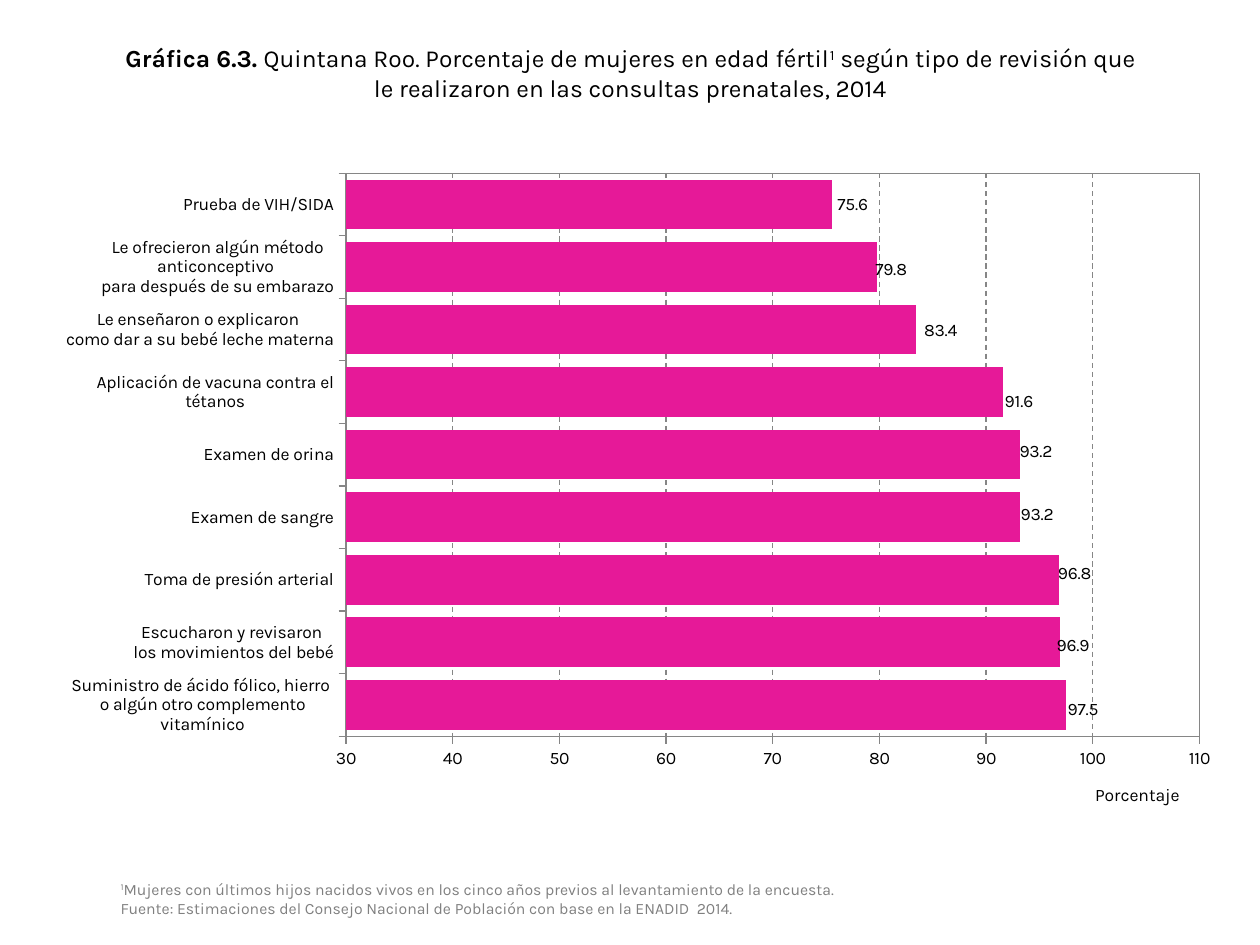
from dataclasses import dataclass

from lxml import etree
from pptx import Presentation
from pptx.chart.data import CategoryChartData
from pptx.dml.color import RGBColor
from pptx.enum.chart import XL_CHART_TYPE, XL_LABEL_POSITION, XL_TICK_MARK
from pptx.enum.dml import MSO_LINE
from pptx.enum.text import MSO_ANCHOR, MSO_AUTO_SIZE, PP_ALIGN
from pptx.oxml import parse_xml
from pptx.oxml.ns import nsdecls, qn
from pptx.util import Inches, Pt

BAR = XL_CHART_TYPE.BAR_CLUSTERED
OUTSIDE_END = XL_LABEL_POSITION.OUTSIDE_END
TICK_OUTSIDE = XL_TICK_MARK.OUTSIDE
DASH = MSO_LINE.DASH
MIDDLE = MSO_ANCHOR.MIDDLE
NO_AUTOFIT = MSO_AUTO_SIZE.NONE
LEFT, CENTER, RIGHT = PP_ALIGN.LEFT, PP_ALIGN.CENTER, PP_ALIGN.RIGHT
TITLE_ONLY = 5
WIDTH, HEIGHT = Inches(10), Inches(7.5)


@dataclass(frozen=True)
class Theme:
    font: str = "Karla"
    text: str = "000000"
    note: str = "808080"
    line: str = "868686"
    bar: str = "E61998"
    title_size: int = 14
    chart_size: int = 10
    note_size: int = 9


THEME = Theme()

TITLE = [[
    ("Gráfica 6.3. ", "bold"),
    ("Quintana Roo. Porcentaje de mujeres en edad fértil", ""),
    ("1", "super"),
    (" según tipo de revisión que le realizaron en las consultas prenatales, 2014", ""),
]]
NOTES = [
    [("1", "super"),
     ("Mujeres con últimos hijos nacidos vivos en los cinco años previos "
      "al levantamiento de la encuesta.", "")],
    [("Fuente: Estimaciones del Consejo Nacional de Población con base "
      "en la ENADID  2014.", "")],
]
REVIEWS = [
    ("Suministro de ácido fólico, hierro \no algún otro complemento vitamínico", 97.5),
    ("Escucharon y revisaron \nlos movimientos del bebé", 96.9),
    ("Toma de presión arterial", 96.8),
    ("Examen de sangre", 93.2),
    ("Examen de orina", 93.2),
    ("Aplicación de vacuna contra el tétanos", 91.6),
    ("Le enseñaron o explicaron \ncomo dar a su bebé leche materna", 83.4),
    ("Le ofrecieron algún método anticonceptivo \npara después de su embarazo", 79.8),
    ("Prueba de VIH/SIDA", 75.6),
]
LABEL_SHIFTS = [
    (-0.003, 0.007), (-0.007, 0.004), (-0.005, -0.009), (-0.004, -0.004),
    (-0.005, -0.004), (-0.003, 0.013), (0.003, 0.001), (-0.006, 0.003),
]
PLOT_SHARES = {"x": 0.245, "y": 0.03, "w": 0.742, "h": 0.802}


def box(left, top, width, height):
    return (int(WIDTH * left), int(HEIGHT * top),
            int(WIDTH * width), int(HEIGHT * height))


def style_font(font, size, color=THEME.text):
    font.name = THEME.font
    font.size = Pt(size)
    font.color.rgb = RGBColor.from_string(color)


def style_line(line, width=0.75):
    line.color.rgb = RGBColor.from_string(THEME.line)
    line.width = Pt(width)


def write_runs(text_frame, paragraphs, size, color, alignment):
    text_frame.word_wrap = True
    text_frame.auto_size = NO_AUTOFIT
    for index, runs in enumerate(paragraphs):
        paragraph = text_frame.add_paragraph() if index else text_frame.paragraphs[0]
        paragraph.alignment = alignment
        for text, style in runs:
            run = paragraph.add_run()
            run.text = text
            style_font(run.font, size, color)
            run.font.bold = style == "bold"
            if style == "super":
                run.font._element.set("baseline", "30000")


def add_title(slide):
    title = slide.shapes.title
    title.left, title.top, title.width, title.height = box(0.083, 0.039, 0.835, 0.076)
    title.text_frame.vertical_anchor = MIDDLE
    write_runs(title.text_frame, TITLE, THEME.title_size, THEME.text, CENTER)


def add_text(slide, place, paragraphs, size, color, alignment):
    shape = slide.shapes.add_textbox(*box(*place))
    write_runs(shape.text_frame, paragraphs, size, color, alignment)


def add_layout(parent, position, shares, inner=False):
    for layout in parent.findall(qn("c:layout")):
        parent.remove(layout)
    layout = parse_xml(f"<c:layout {nsdecls('c')}><c:manualLayout/></c:layout>")
    values = dict(shares)
    if inner:
        values = {"layoutTarget": "inner", "xMode": "edge", "yMode": "edge", **values}
    for name, value in values.items():
        etree.SubElement(layout[0], qn(f"c:{name}")).set("val", str(value))
    parent.insert(position, layout)


def style_plot_area(chart):
    plot_area = chart._chartSpace.chart.plotArea
    add_layout(plot_area, 0, PLOT_SHARES, inner=True)
    plot_area.append(parse_xml(
        f"<c:spPr {nsdecls('c', 'a')}><a:noFill/><a:ln w=\"9525\"><a:solidFill>"
        f"<a:srgbClr val=\"{THEME.line}\"/></a:solidFill></a:ln></c:spPr>"))


def style_axes(chart):
    for axis in (chart.category_axis, chart.value_axis):
        axis.major_tick_mark = TICK_OUTSIDE
        style_line(axis.format.line)
        style_font(axis.tick_labels.font, THEME.chart_size)
    chart.category_axis.has_major_gridlines = False
    axis = chart.value_axis
    axis.minimum_scale, axis.maximum_scale, axis.major_unit = 30, 110, 10
    axis.tick_labels.number_format = "0"
    axis.tick_labels.number_format_is_linked = False
    axis.has_major_gridlines = True
    style_line(axis.major_gridlines.format.line)
    axis.major_gridlines.format.line.dash_style = DASH


def style_labels(series):
    labels = series.data_labels
    labels.show_value = True
    labels.number_format = "0.0"
    labels.number_format_is_linked = False
    labels.position = OUTSIDE_END
    style_font(labels.font, THEME.chart_size)
    for index in range(len(LABEL_SHIFTS)):
        label = series.points[index].data_label
        style_font(label.font, THEME.chart_size)
        label.position = OUTSIDE_END
    elements = series._element.findall(f"{qn('c:dLbls')}/{qn('c:dLbl')}")
    for element, (x, y) in zip(elements, LABEL_SHIFTS):
        add_layout(element, 1, {"x": x, "y": y})


def add_bar_chart(slide):
    data = CategoryChartData(number_format="0.0")
    data.categories = [name for name, _ in REVIEWS]
    data.add_series("Series 1", [value for _, value in REVIEWS])
    chart = slide.shapes.add_chart(BAR, *box(0.051, 0.161, 0.913, 0.743), data).chart
    style_font(chart.font, THEME.chart_size)
    chart.has_legend = False
    chart.has_title = False
    plot = chart.plots[0]
    plot.gap_width = 26
    plot.vary_by_categories = False
    series = plot.series[0]
    series.format.fill.solid()
    series.format.fill.fore_color.rgb = RGBColor.from_string(THEME.bar)
    style_labels(series)
    style_axes(chart)
    style_plot_area(chart)


def main():
    presentation = Presentation()
    presentation.slide_width, presentation.slide_height = WIDTH, HEIGHT
    slide = presentation.slides.add_slide(presentation.slide_layouts[TITLE_ONLY])
    add_bar_chart(slide)
    add_text(slide, (0.828, 0.823, 0.118, 0.036), [[("Porcentaje", "")]],
             THEME.chart_size, THEME.text, RIGHT)
    add_title(slide)
    add_text(slide, (0.086, 0.924, 0.874, 0.053), NOTES,
             THEME.note_size, THEME.note, LEFT)
    presentation.save("out.pptx")


if __name__ == "__main__":
    main()
